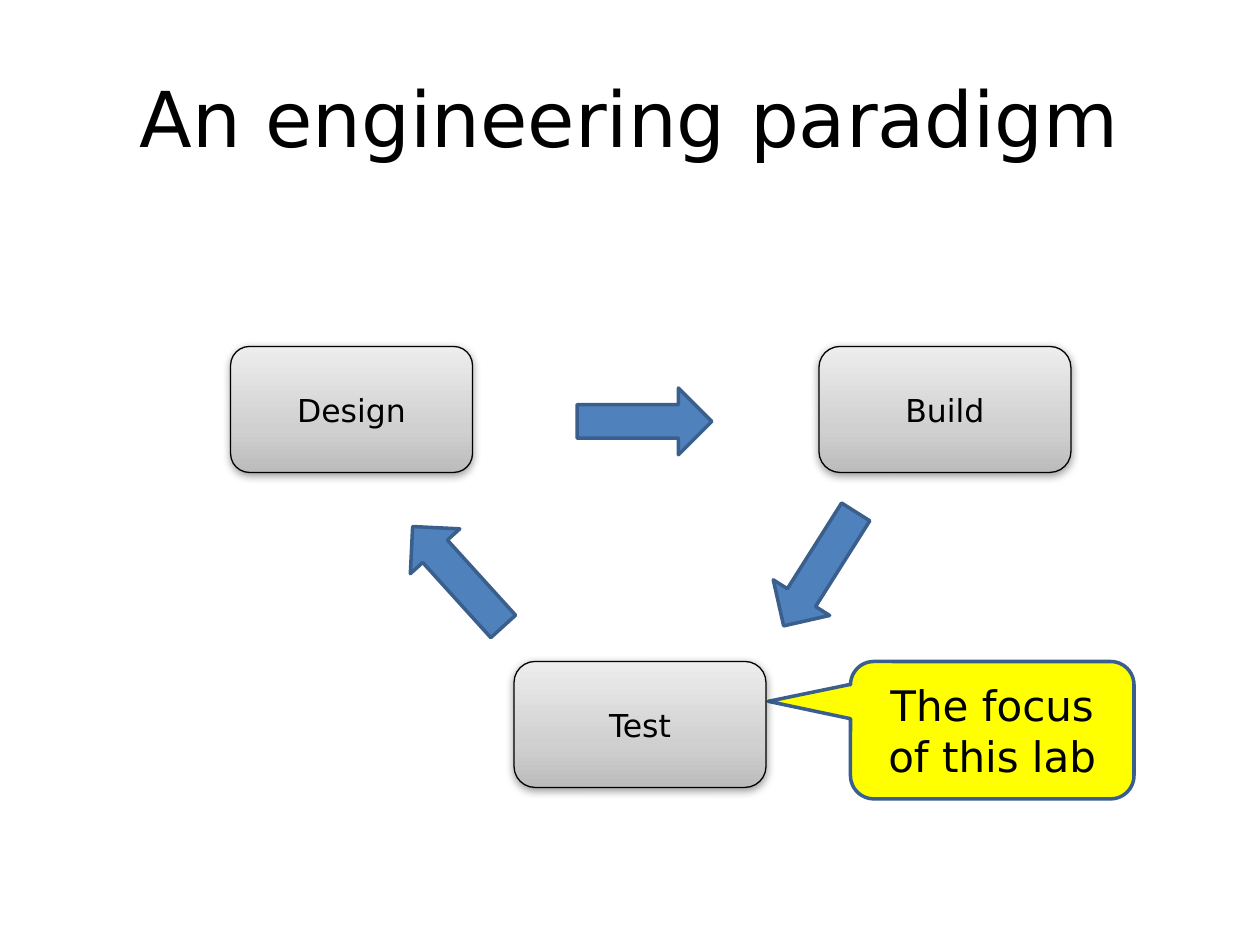
from copy import deepcopy

from lxml import etree
from pptx import Presentation
from pptx.dml.color import RGBColor
from pptx.enum.shapes import MSO_SHAPE
from pptx.enum.text import MSO_ANCHOR, PP_ALIGN
from pptx.oxml.ns import qn
from pptx.util import Inches, Pt

ROUNDED = MSO_SHAPE.ROUNDED_RECTANGLE
CALLOUT = MSO_SHAPE.ROUNDED_RECTANGULAR_CALLOUT
RIGHT_ARROW = MSO_SHAPE.RIGHT_ARROW
UP_ARROW = MSO_SHAPE.UP_ARROW
CENTER = PP_ALIGN.CENTER
MIDDLE = MSO_ANCHOR.MIDDLE

BLACK = RGBColor(0x00, 0x00, 0x00)
YELLOW = RGBColor(0xFF, 0xFF, 0x00)
BLUE = RGBColor(0x4F, 0x81, 0xBD)
DARK_BLUE = RGBColor(0x3A, 0x5F, 0x8C)
GRAY_STOPS = (
    (0, RGBColor(0xBC, 0xBC, 0xBC)),
    (0.35, RGBColor(0xD0, 0xD0, 0xD0)),
    (1, RGBColor(0xED, 0xED, 0xED)),
)
FONT = "DejaVu Sans"
TITLE_ONLY = 5


class CycleSlide:
    def __init__(self, presentation):
        self.slide = presentation.slides.add_slide(presentation.slide_layouts[TITLE_ONLY])

    def label(self, shape, text, size):
        frame = shape.text_frame
        frame.text = text
        frame.word_wrap = True
        frame.vertical_anchor = MIDDLE
        paragraph = frame.paragraphs[0]
        paragraph.alignment = CENTER
        font = paragraph.runs[0].font
        font.name = FONT
        font.size = Pt(size)
        font.color.rgb = BLACK

    def title(self, text, left, top, width, height):
        title = self.slide.shapes.title
        title.left, title.top = Inches(left), Inches(top)
        title.width, title.height = Inches(width), Inches(height)
        self.label(title, text, 44)

    def outline(self, kind, box, line_color, line_width):
        shape = self.slide.shapes.add_shape(kind, *map(Inches, box))
        shape.shadow.inherit = False
        shape.line.color.rgb = line_color
        shape.line.width = Pt(line_width)
        return shape

    def solid(self, kind, box, color):
        shape = self.outline(kind, box, DARK_BLUE, 2)
        shape.fill.solid()
        shape.fill.fore_color.rgb = color
        return shape

    def callout(self, text, box, adjustments):
        shape = self.solid(CALLOUT, box, YELLOW)
        for index, value in enumerate(adjustments):
            shape.adjustments[index] = value
        self.label(shape, text, 24)

    def arrow(self, kind, box, rotation=0):
        self.solid(kind, box, BLUE).rotation = rotation

    def step(self, text, left, top, width=2, corner=0.167):
        shape = self.outline(ROUNDED, (left, top, width, 1), BLACK, 0.75)
        shape.adjustments[0] = corner
        self.shade(shape)
        self.drop_shadow(shape)
        self.label(shape, text, 18)

    def shade(self, shape):
        shape.fill.gradient()
        shape.fill.gradient_angle = 90
        stop_list = next(shape.element.spPr.iter(qn("a:gsLst")))
        stop_list.append(deepcopy(stop_list[0]))
        for stop, (position, color) in zip(shape.fill.gradient_stops, GRAY_STOPS):
            stop.position = position
            stop.color.rgb = color

    def drop_shadow(self, shape):
        effects = shape.element.spPr.find(qn("a:effectLst"))
        shadow = etree.SubElement(
            effects, qn("a:outerShdw"), blurRad=str(Pt(5)), dist=str(Pt(1.6)),
            dir="5400000", rotWithShape="0",
        )
        color = etree.SubElement(shadow, qn("a:srgbClr"), val=str(BLACK))
        etree.SubElement(color, qn("a:alpha"), val="38000")


def main():
    presentation = Presentation()
    presentation.slide_width = Inches(10)
    presentation.slide_height = Inches(7.5)
    cycle = CycleSlide(presentation)

    cycle.title("An engineering paradigm", 0.5, 0.3, 9, 1.25)
    cycle.callout("The focus of this lab", (6.75, 5.25, 2.25, 1.09), (-0.79, -0.21, 0.17))
    cycle.step("Design", 1.83, 2.75, width=1.92, corner=0.15)
    cycle.step("Build", 6.5, 2.75)
    cycle.step("Test", 4.08, 5.25)

    length, thickness = 1.07, 0.53
    cycle.arrow(RIGHT_ARROW, (4.58, 3.08, length, thickness))
    cycle.arrow(RIGHT_ARROW, (5.97, 4.25, length, thickness), 122.3)
    cycle.arrow(UP_ARROW, (3.37, 4.04, thickness, length), 317.8)

    presentation.save("out.pptx")


if __name__ == "__main__":
    main()
